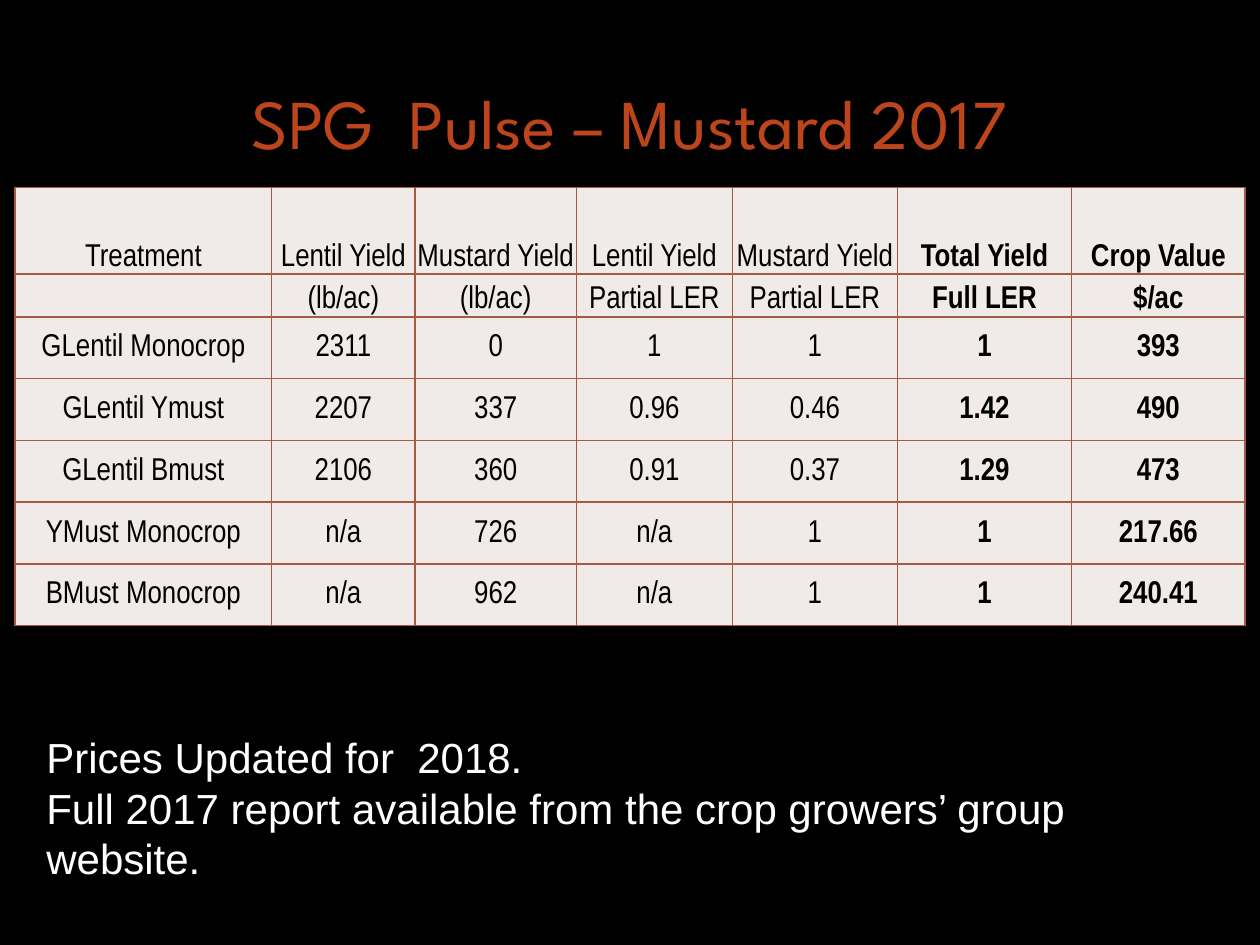
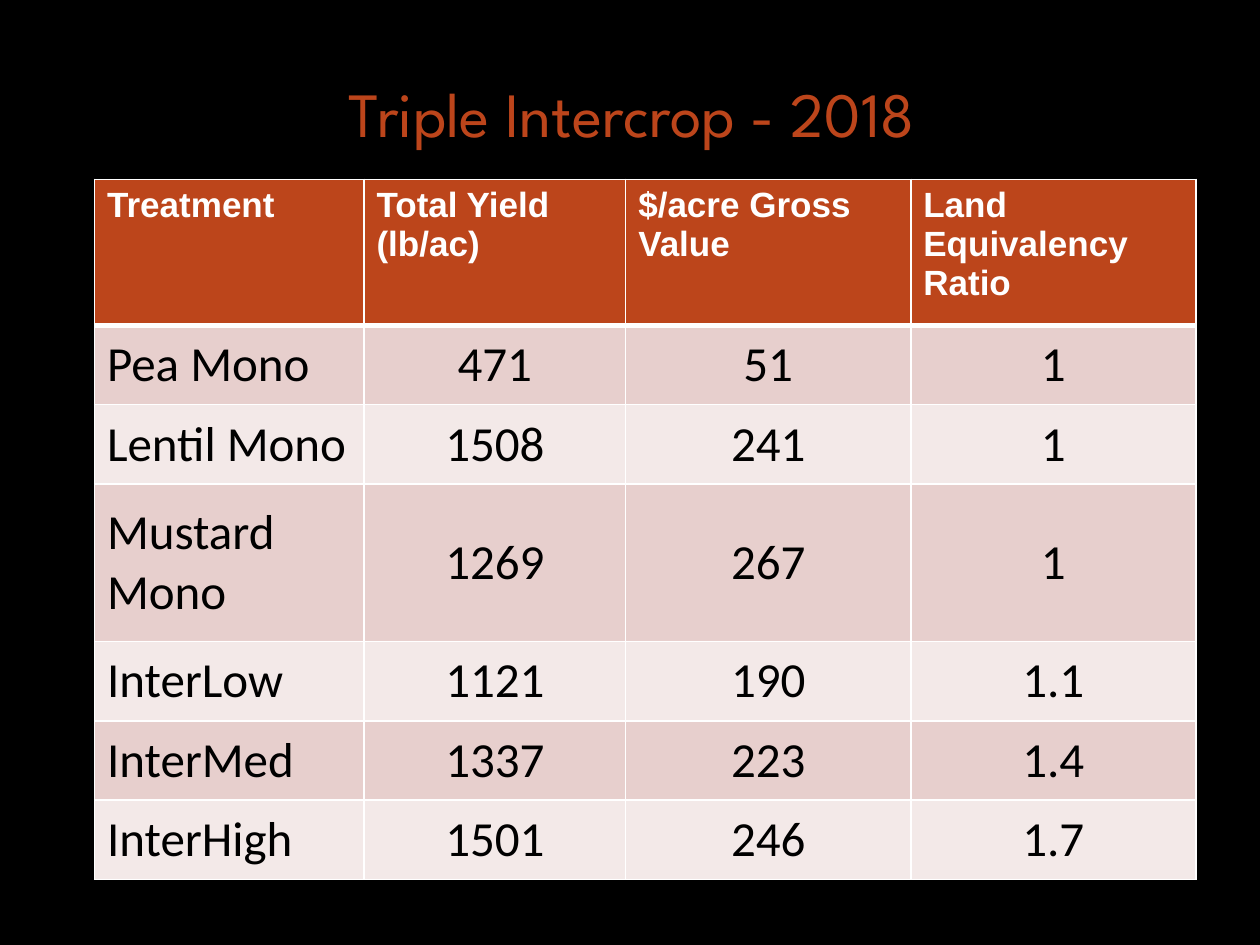
from dataclasses import dataclass

from lxml.etree import SubElement
from pptx import Presentation
from pptx.dml.color import RGBColor
from pptx.enum.text import MSO_ANCHOR, MSO_AUTO_SIZE, PP_ALIGN
from pptx.oxml.ns import qn
from pptx.util import Pt


@dataclass(frozen=True)
class Theme:
    # Colours
    background: str = "000000"
    accent: str = "BC451B"
    light: str = "FFFFFF"
    dark: str = "000000"
    yield_fill: str = "F0EAE9"
    yield_border: str = "A55A43"
    bands: tuple = ("E7CFCD", "F3E9E8")
    # Fonts
    title_font: str = "League Spartan"
    body_font: str = "Arial"
    narrow_font: str = "Arial Narrow"
    number_font: str = "Calibri"
    # Type sizes
    long_title: int = 40
    short_title: int = 36
    note: int = 24
    yield_text: int = 18
    crop_head: int = 20
    crop_text: int = 28


THEME = Theme()
TIGHT = 0.7  # cell margin in points

YIELD_ROWS = [
    ["Treatment", "Lentil Yield", "Mustard Yield", "Lentil Yield",
     "Mustard Yield", "Total Yield", "Crop Value"],
    ["", "(lb/ac)", "(lb/ac)", "Partial LER", "Partial LER", "Full LER", "$/ac"],
    ["GLentil Monocrop", "2311", "0", "1", "1", "1", "393"],
    ["GLentil Ymust", "2207", "337", "0.96", "0.46", "1.42", "490"],
    ["GLentil Bmust", "2106", "360", "0.91", "0.37", "1.29", "473"],
    ["YMust Monocrop", "n/a", "726", "n/a", "1", "1", "217.66"],
    ["BMust Monocrop", "n/a", "962", "n/a", "1", "1", "240.41"],
]
CROP_ROWS = [
    ["Treatment", "Total Yield (lb/ac)", "$/acre Gross Value",
     "Land Equivalency Ratio"],
    ["Pea Mono", "471", "51", "1"],
    ["Lentil Mono", "1508", "241", "1"],
    ["Mustard Mono", "1269", "267", "1"],
    ["InterLow", "1121", "190", "1.1"],
    ["InterMed", "1337", "223", "1.4"],
    ["InterHigh", "1501", "246", "1.7"],
]


def set_all(obj, values):
    for name, value in values.items():
        setattr(obj, name, value)


def add_text(p, text, font, size, color, bold=False):
    r = p.add_run()
    r.text = text
    set_all(r.font, {"name": font, "size": Pt(size), "bold": bold})
    r.font.color.rgb = RGBColor.from_string(color)


def place(sp, left, top, width, height):
    set_all(sp, {"left": Pt(left), "top": Pt(top),
                 "width": Pt(width), "height": Pt(height)})


# Title slide element
def add_titled_slide(prs, text, size, left, top):
    s = prs.slides.add_slide(prs.slide_layouts[5])
    place(s.shapes.title, left, top, 611.3, 76.3)
    tf = s.shapes.title.text_frame
    set_all(tf, {"word_wrap": True, "auto_size": MSO_AUTO_SIZE.NONE,
                 "vertical_anchor": MSO_ANCHOR.MIDDLE})
    p = tf.paragraphs[0]
    p.alignment = PP_ALIGN.CENTER
    add_text(p, text, THEME.title_font, size, THEME.accent)
    return s


# Table elements
def set_borders(cell, color, **widths):
    tc_pr = cell._tc.get_or_add_tcPr()
    for i, side in enumerate("LRTB"):
        ln = SubElement(tc_pr, qn(f"a:ln{side}"), w=str(Pt(widths.get(side, 1))))
        fill = SubElement(ln, qn("a:solidFill"))
        SubElement(fill, qn("a:srgbClr"), val=color)
        tc_pr.insert(i, ln)


def add_table(s, rows, left, top, widths, heights, style_cell):
    frame = s.shapes.add_table(len(rows), len(widths), Pt(left), Pt(top),
                               Pt(sum(widths)), Pt(sum(heights)))
    table = frame.table
    set_all(table, {"first_row": False, "horz_banding": False})
    for column, width in zip(table.columns, widths):
        column.width = Pt(width)
    for row, height in zip(table.rows, heights):
        row.height = Pt(height)
    for i, texts in enumerate(rows):
        for j, text in enumerate(texts):
            style_cell(table.cell(i, j), text, i, j)


def fill_cell(cell, color, anchor, tight):
    cell.fill.solid()
    cell.fill.fore_color.rgb = RGBColor.from_string(color)
    cell.vertical_anchor = anchor
    if tight:
        for side in ("left", "right", "top", "bottom"):
            setattr(cell, f"margin_{side}", Pt(TIGHT))


def style_yield_cell(cell, text, i, j):
    anchor = MSO_ANCHOR.BOTTOM if i < 2 else MSO_ANCHOR.MIDDLE
    fill_cell(cell, THEME.yield_fill, anchor, tight=True)
    set_borders(cell, THEME.yield_border)
    p = cell.text_frame.paragraphs[0]
    set_all(p, {"alignment": PP_ALIGN.CENTER, "line_spacing": 1.07})
    if text:
        add_text(p, text, THEME.narrow_font, THEME.yield_text, THEME.dark,
                 bold=j >= 5)


def style_crop_cell(cell, text, i, j):
    p = cell.text_frame.paragraphs[0]
    if i == 0:
        fill_cell(cell, THEME.accent, MSO_ANCHOR.TOP, tight=False)
        set_borders(cell, THEME.light, B=3)
        add_text(p, text, THEME.body_font, THEME.crop_head, THEME.light, bold=True)
        return
    fill_cell(cell, THEME.bands[(i - 1) % 2], MSO_ANCHOR.MIDDLE, tight=j > 0)
    set_borders(cell, THEME.light, T=3 if i == 1 else 1)
    p.alignment = PP_ALIGN.CENTER if j else PP_ALIGN.LEFT
    add_text(p, text, THEME.number_font, THEME.crop_text, THEME.dark)


# Note below a table
def add_note(s, lines, left, top, width, height):
    sp = s.shapes.add_textbox(Pt(left), Pt(top), Pt(width), Pt(height))
    tf = sp.text_frame
    set_all(tf, {"word_wrap": True, "auto_size": MSO_AUTO_SIZE.SHAPE_TO_FIT_TEXT})
    for i, line in enumerate(lines):
        p = tf.add_paragraph() if i else tf.paragraphs[0]
        add_text(p, line, THEME.body_font, THEME.note, THEME.light)


def main():
    prs = Presentation()
    set_all(prs, {"slide_width": Pt(720), "slide_height": Pt(540)})
    fill = prs.slide_master.background.fill
    fill.solid()
    fill.fore_color.rgb = RGBColor.from_string(THEME.background)

    # Lentil and mustard yields
    s = add_titled_slide(prs, "SPG  Pulse – Mustard 2017", THEME.long_title, 54, 31)
    add_table(s, YIELD_ROWS, 8.6, 107.2,
              [146.7, 81.9, 92.2, 89.2, 94.3, 99.5, 99.2],
              [49.5, 24.4] + [35.3] * 5, style_yield_cell)
    add_note(s, ["Prices Updated for  2018.",
                 "Full 2017 report available from the crop growers’ group website."],
             19.4, 414.7, 622.8, 94.3)

    # Triple intercrop results
    s = add_titled_slide(prs, "Triple Intercrop - 2018", THEME.short_title, 55.4, 26)
    add_table(s, CROP_ROWS, 54, 102.5, [154, 149.6, 162.9, 162.9],
              [83.5, 45.3, 45.3, 90, 45.3, 45.3, 45.3], style_crop_cell)

    prs.save("out.pptx")


if __name__ == "__main__":
    main()
